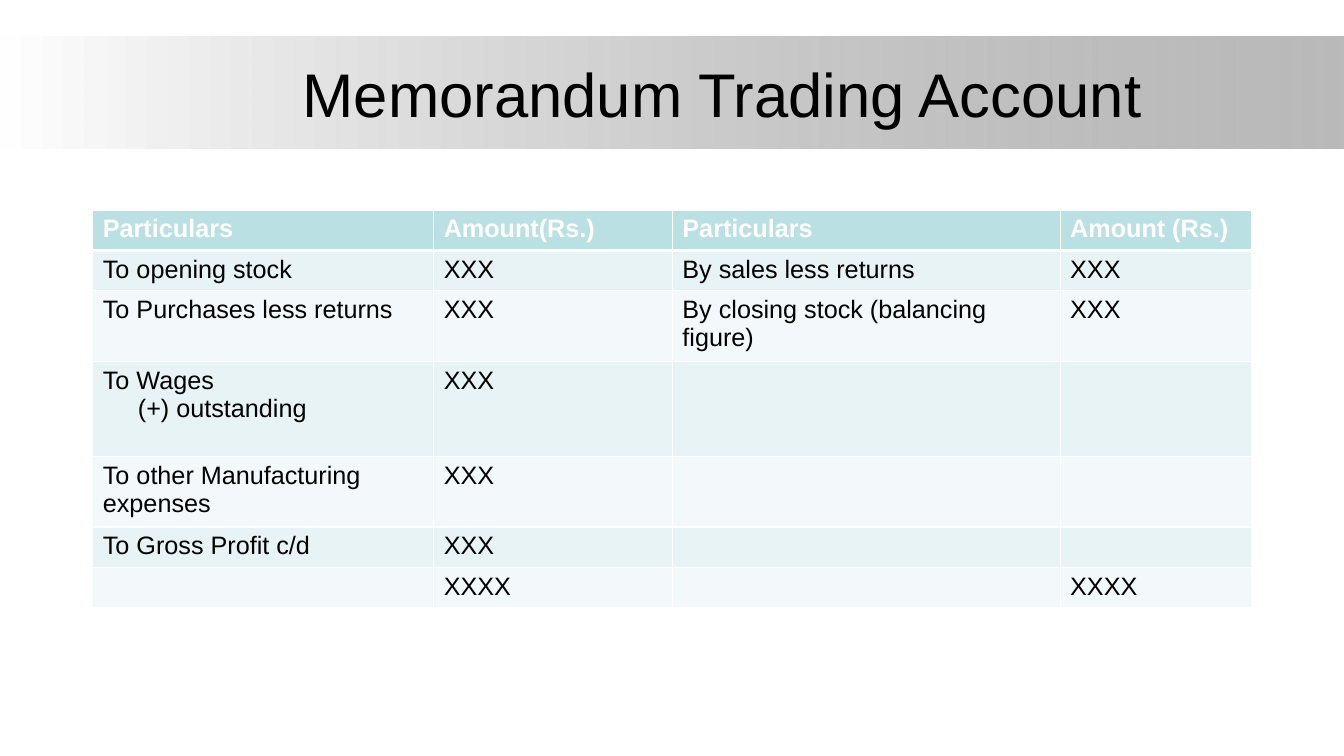
from dataclasses import dataclass

from lxml import etree
from pptx import Presentation
from pptx import util as u
from pptx.dml import color
from pptx.enum import shapes, text
from pptx.oxml import ns


@dataclass(frozen=True)
class Theme:
    font: str = "Arial"
    title_size: float = 44
    table_size: float = 18
    ink: str = "000000"
    white: str = "FFFFFF"
    band_end: str = "808080"
    band_opacity: int = 54
    header: str = "BBE0E3"
    stripes: tuple = ("E7F3F4", "F3F9FA")
    border: float = 1
    header_rule: float = 3


HEADINGS = ["Particulars", "Amount(Rs.)", "Particulars", "Amount (Rs.)"]
ENTRIES = [
    ["To opening stock", "XXX", "By sales less returns", "XXX"],
    ["To Purchases less returns", "XXX", "By closing stock (balancing figure)", "XXX"],
    ["To Wages\n(+) outstanding", "XXX", "", ""],
    ["To other Manufacturing expenses", "XXX", "", ""],
    ["To Gross Profit c/d", "XXX", "", ""],
    ["", "XXXX", "", "XXXX"],
]
COLUMN_WIDTHS = [243.5, 170.5, 277, 136.5]
ROW_HEIGHTS = [28.8, 28.8, 47.2, 67.8, 50.6, 28.8, 28.8]


def rgb(value):
    return color.RGBColor.from_string(value)


def apply(target, values):
    for name, value in values.items():
        setattr(target, name, value)


class SlideBuilder:
    def __init__(self, slide, theme):
        self.slide = slide
        self.theme = theme

    def format_font(self, paragraph, size, ink, bold=False):
        apply(paragraph.font, {"name": self.theme.font, "size": u.Pt(size), "bold": bold})
        paragraph.font.color.rgb = rgb(ink)

    def gradient_band(self, left, top, width, height):
        shape = self.slide.shapes.add_shape(
            shapes.MSO_SHAPE.RECTANGLE, *map(u.Pt, (left, top, width, height)))
        shape.shadow.inherit = False
        shape.line.fill.background()
        shape.fill.gradient()
        shape.fill.gradient_angle = 0
        stops = zip(shape.fill.gradient_stops, (self.theme.white, self.theme.band_end), (0, 1))
        for stop, value, position in stops:
            stop.color.rgb = rgb(value)
            stop.position = position
        end_color = shape.element.findall(".//" + ns.qn("a:srgbClr"))[-1]
        etree.SubElement(end_color, ns.qn("a:alpha"), val=str(self.theme.band_opacity * 1000))

    def title(self, wording, left, top, width, height, inset):
        shape = self.slide.shapes.add_textbox(*map(u.Pt, (left, top, width, height)))
        frame = shape.text_frame
        apply(frame, {"word_wrap": True, "vertical_anchor": text.MSO_ANCHOR.MIDDLE,
                      "margin_left": u.Pt(inset), "text": wording})
        paragraph = frame.paragraphs[0]
        paragraph.alignment = text.PP_ALIGN.CENTER
        self.format_font(paragraph, self.theme.title_size, self.theme.ink)

    def border(self, cell, side, weight):
        properties = cell._tc.get_or_add_tcPr()
        line = etree.SubElement(properties, ns.qn("a:ln" + side), w=str(u.Pt(weight)))
        fill = etree.SubElement(line, ns.qn("a:solidFill"))
        etree.SubElement(fill, ns.qn("a:srgbClr"), val=self.theme.white)

    def cell(self, cell, wording, row, indent):
        theme = self.theme
        is_header = row == 0
        weights = {"L": theme.border, "R": theme.border,
                   "T": theme.header_rule if row == 1 else theme.border,
                   "B": theme.header_rule if is_header else theme.border}
        for side, weight in weights.items():
            self.border(cell, side, weight)
        cell.fill.solid()
        cell.fill.fore_color.rgb = rgb(theme.header if is_header else theme.stripes[(row - 1) % 2])
        cell.text = wording
        for index, paragraph in enumerate(cell.text_frame.paragraphs):
            if index:
                paragraph._p.get_or_add_pPr().set("marL", str(u.Pt(indent)))
            self.format_font(paragraph, theme.table_size,
                             theme.white if is_header else theme.ink, is_header)

    def table(self, rows, left, top, widths, heights, indent):
        frame = self.slide.shapes.add_table(
            len(rows), len(widths),
            *map(u.Pt, (left, top, sum(widths), sum(heights))))
        table = frame.table
        for column, width in zip(table.columns, widths):
            column.width = u.Pt(width)
        for row, height in zip(table.rows, heights):
            row.height = u.Pt(height)
        for row, wordings in enumerate(rows):
            for column, wording in enumerate(wordings):
                self.cell(table.cell(row, column), wording, row, indent)


def main():
    presentation = Presentation()
    apply(presentation, {"slide_width": u.Pt(960), "slide_height": u.Pt(540)})
    slide = presentation.slides.add_slide(presentation.slide_layouts[6])
    builder = SlideBuilder(slide, Theme())
    builder.gradient_band(0, 26, 960, 80)
    builder.title("Memorandum Trading Account", 48, 21.6, 864, 90, inset=79.2)
    builder.table([HEADINGS] + ENTRIES, 66.3, 150, COLUMN_WIDTHS, ROW_HEIGHTS, indent=25)
    presentation.save("out.pptx")


if __name__ == "__main__":
    main()
